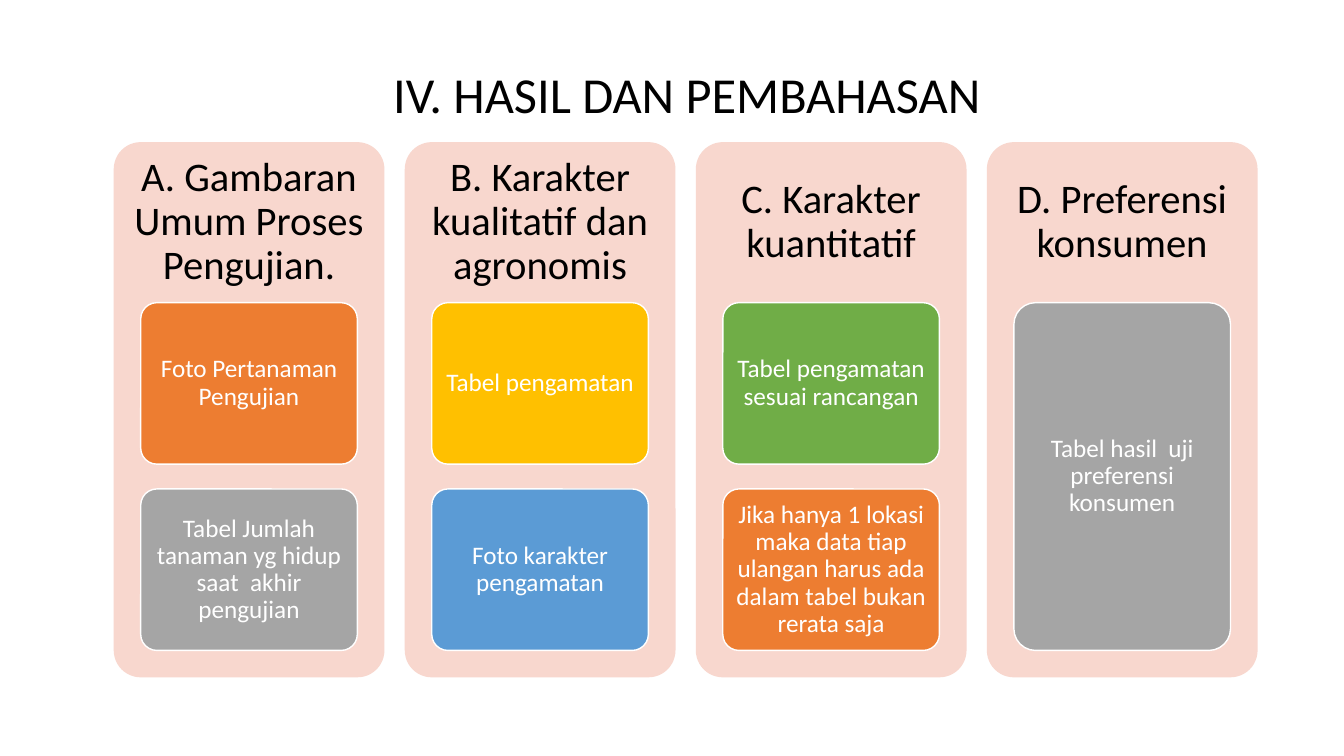
from pptx import Presentation
from pptx.dml.color import RGBColor
from pptx.enum.shapes import MSO_SHAPE
from pptx.enum.text import MSO_ANCHOR, PP_ALIGN
from pptx.util import Pt

ROUNDED = MSO_SHAPE.ROUNDED_RECTANGLE
MIDDLE = MSO_ANCHOR.MIDDLE
LEFT, CENTER = PP_ALIGN.LEFT, PP_ALIGN.CENTER

BLACK = RGBColor(0x00, 0x00, 0x00)
WHITE = RGBColor(0xFF, 0xFF, 0xFF)
PINK = RGBColor(0xF8, 0xD7, 0xCE)
ORANGE = RGBColor(0xED, 0x7D, 0x31)
GRAY = RGBColor(0xA5, 0xA5, 0xA5)
YELLOW = RGBColor(0xFF, 0xC0, 0x00)
BLUE = RGBColor(0x5B, 0x9B, 0xD5)
GREEN = RGBColor(0x70, 0xAD, 0x47)

# Content: each column has a heading and its cards
TITLE = "IV. HASIL DAN PEMBAHASAN"
COLUMNS = [
    ("A. Gambaran Umum Proses Pengujian.", [
        ("Foto Pertanaman Pengujian", ORANGE),
        ("Tabel Jumlah tanaman yg hidup saat  akhir pengujian", GRAY),
    ]),
    ("B. Karakter kualitatif dan agronomis", [
        ("Tabel pengamatan", YELLOW),
        ("Foto karakter pengamatan", BLUE),
    ]),
    ("C. Karakter kuantitatif", [
        ("Tabel pengamatan sesuai rancangan", GREEN),
        ("Jika hanya 1 lokasi maka data tiap ulangan harus ada dalam tabel "
         "bukan rerata saja", ORANGE),
    ]),
    ("D. Preferensi konsumen", [
        ("Tabel hasil  uji preferensi konsumen", GRAY),
    ]),
]

# Layout, in points
PANEL_LEFT, PANEL_TOP = 81.2, 101.5
PANEL_WIDTH, PANEL_HEIGHT = 193.4, 382.3
PANEL_PITCH = 207.9
HEADING_HEIGHT = 114.7
CARD_INDENT = PANEL_WIDTH / 10
CARD_WIDTH = PANEL_WIDTH * 0.8
CARDS_TOP, CARDS_HEIGHT, CARD_GAP = 216.2, 248.4, 17.7


def write_text(shape, text, size, color, alignment, margins, line_spacing=1.0):
    frame = shape.text_frame
    frame.word_wrap = True
    frame.vertical_anchor = MIDDLE
    side, top = margins
    frame.margin_left = frame.margin_right = Pt(side)
    frame.margin_top = frame.margin_bottom = Pt(top)
    frame.text = text
    paragraph = frame.paragraphs[0]
    paragraph.alignment = alignment
    paragraph.line_spacing = line_spacing
    paragraph.font.name = "Calibri"
    paragraph.font.size = Pt(size)
    paragraph.font.color.rgb = color


def add_rounded(slide, left, top, width, height, fill):
    shape = slide.shapes.add_shape(
        ROUNDED, Pt(left), Pt(top), Pt(width), Pt(height))
    shape.adjustments[0] = 0.1
    shape.shadow.inherit = False
    shape.fill.solid()
    shape.fill.fore_color.rgb = fill
    shape.line.fill.background()
    return shape


def add_column(slide, left, heading, cards):
    # Panel and heading
    add_rounded(slide, left, PANEL_TOP, PANEL_WIDTH, PANEL_HEIGHT, PINK)
    heading_box = slide.shapes.add_textbox(
        Pt(left), Pt(PANEL_TOP), Pt(PANEL_WIDTH), Pt(HEADING_HEIGHT))
    write_text(heading_box, heading, 29, BLACK, CENTER, (8.7, 8.7), 0.9)

    # Cards share the height below the heading
    height = (CARDS_HEIGHT - CARD_GAP * (len(cards) - 1)) / len(cards)
    for row, (text, fill) in enumerate(cards):
        top = CARDS_TOP + row * (height + CARD_GAP)
        card = add_rounded(
            slide, left + CARD_INDENT, top, CARD_WIDTH, height, fill)
        card.line.color.rgb = WHITE
        card.line.width = Pt(1)
        write_text(card, text, 18, WHITE, CENTER, (3.6, 2.7), 0.9)


def main():
    presentation = Presentation()
    presentation.slide_width, presentation.slide_height = Pt(960), Pt(540)
    slide = presentation.slides.add_slide(presentation.slide_layouts[5])

    # Title
    title = slide.shapes.title
    title.left, title.top = Pt(273.6), Pt(41)
    title.width, title.height = Pt(480), Pt(51)
    write_text(title, TITLE, 36, BLACK, LEFT, (7.2, 3.6))

    # Columns
    for index, (heading, cards) in enumerate(COLUMNS):
        add_column(slide, PANEL_LEFT + index * PANEL_PITCH, heading, cards)

    presentation.save("out.pptx")


if __name__ == "__main__":
    main()
